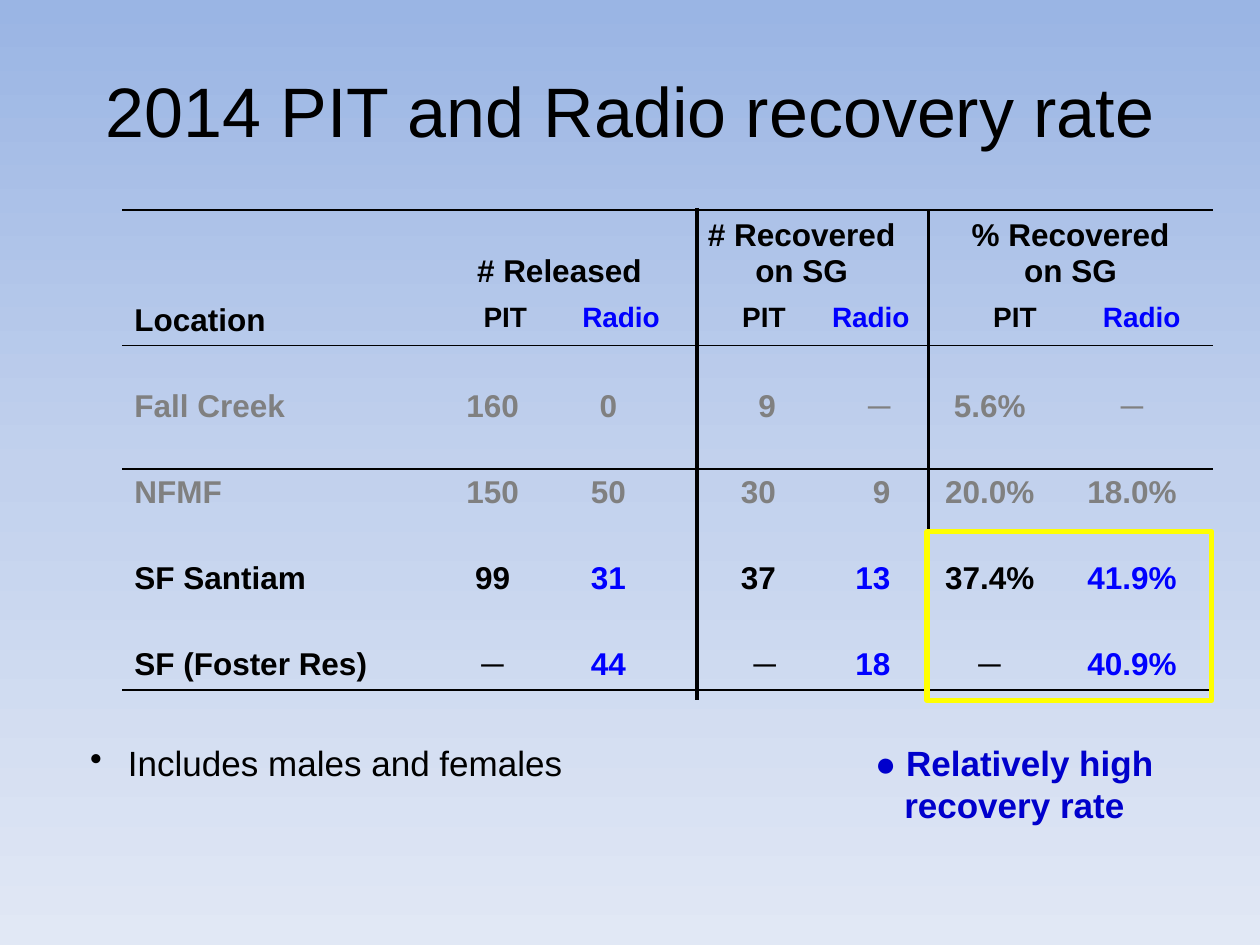
from copy import deepcopy

from lxml.etree import SubElement
from pptx import Presentation
from pptx.dml.color import RGBColor
from pptx.enum.shapes import MSO_CONNECTOR, MSO_SHAPE
from pptx.enum.text import MSO_ANCHOR, PP_ALIGN
from pptx.oxml import parse_xml
from pptx.oxml.ns import nsdecls, qn
from pptx.util import Cm, Pt

BLACK = RGBColor(0x00, 0x00, 0x00)
GREY = RGBColor(0x80, 0x80, 0x80)
BLUE = RGBColor(0x00, 0x00, 0xFF)
NOTE_BLUE = RGBColor(0x00, 0x00, 0xCC)
YELLOW = RGBColor(0xFF, 0xFF, 0x00)
BACKGROUND = [
    (0, RGBColor(0x9A, 0xB5, 0xE4)),
    (0.5, RGBColor(0xC2, 0xD1, 0xED)),
    (1, RGBColor(0xE1, 0xE8, 0xF5)),
]
FONT = "Arial"
NO_STYLE = "{2D5ABB26-0587-4C30-8999-92F81FD0307C}"
LEFT, CENTER, RIGHT = PP_ALIGN.LEFT, PP_ALIGN.CENTER, PP_ALIGN.RIGHT
TOP, MIDDLE, BOTTOM = MSO_ANCHOR.TOP, MSO_ANCHOR.MIDDLE, MSO_ANCHOR.BOTTOM

TITLE = "2014 PIT and Radio recovery rate"
GROUPS = [["# Released"], ["# Recovered", "on SG"], ["% Recovered", "on SG"]]
HEADINGS = ["Location"] + ["PIT", "Radio"] * len(GROUPS)
DATA = [  # text colour of the row, text anchor, values
    (GREY, MIDDLE, ["Fall Creek", "160", "0", "9", "─", "5.6%", "─"]),
    (GREY, MIDDLE, ["NFMF", "150", "50", "30", "9", "20.0%", "18.0%"]),
    (BLACK, BOTTOM, ["SF Santiam", "99", "31", "37", "13", "37.4%", "41.9%"]),
    (BLACK, BOTTOM, ["SF (Foster Res)", "─", "44", "─", "18", "─", "40.9%"]),
]
COLUMN_WIDTHS = [6.48, 2.49, 2.18, 2.79, 2.31, 2.87, 2.87]
ROW_HEIGHTS = [1.73, 0.99, 2.49, 0.99, 1.73, 1.73]
ALIGNMENTS = [LEFT, CENTER, CENTER, RIGHT, RIGHT, CENTER, CENTER]
RIGHT_INSETS = [0.25, 0.76, 0.76, 0.76, 0.76, 0.64, 0.64]
HEADING_INSETS = {3: 1.04, 5: 0.88}
RULES = {0: ("lnT", 1.5), 1: ("lnB", 1), 2: ("lnB", 1.5), 5: ("lnB", 1.5)}
DIVIDERS = [(18.72, 4.24, 14.15), (14.05, 4.19, 14.12)]  # x, top, bottom


def write(frame, lines, size, color, align=LEFT, bold=False):
    frame.word_wrap = True
    for index, line in enumerate(lines):
        para = frame.paragraphs[0] if index == 0 else frame.add_paragraph()
        para.alignment = align
        span = para.add_run()
        span.text = line
        span.font.name, span.font.size = FONT, Pt(size)
        span.font.bold, span.font.color.rgb = bold, color


def add_text(page, place, lines, size, color, align=LEFT, bold=False):
    box = page.shapes.add_textbox(*map(Cm, place))
    write(box.text_frame, lines, size, color, align, bold)
    return box


def fill_cell(cell, lines, size, color, align, anchor, left=0.25, right=0.25):
    cell.vertical_anchor = anchor
    cell.margin_left, cell.margin_right = Cm(left), Cm(right)
    cell.margin_top, cell.margin_bottom = Cm(0.13), Cm(0.15)
    write(cell.text_frame, lines, size, color, align, bold=True)


def add_rule(cell, edge, width):
    """Draw a black border on one edge of a cell."""
    border = parse_xml(
        f'<a:{edge} {nsdecls("a")} w="{Pt(width)}"><a:solidFill>'
        f'<a:srgbClr val="{BLACK}"/></a:solidFill></a:{edge}>'
    )
    cell._tc.get_or_add_tcPr().insert(0, border)


def paint_background(page):
    fill = page.background.fill
    fill.gradient()
    fill.gradient_angle = 270
    stops = page._element.find(".//" + qn("a:gsLst"))
    stops.append(deepcopy(stops[-1]))
    for stop, (position, color) in zip(fill.gradient_stops, BACKGROUND):
        stop.position = position
        stop.color.rgb = color


def add_recovery_table(page):
    frame = page.shapes.add_table(
        len(ROW_HEIGHTS), len(COLUMN_WIDTHS), Cm(2.46), Cm(4.24),
        Cm(sum(COLUMN_WIDTHS)), Cm(sum(ROW_HEIGHTS)),
    )
    table = frame.table
    table.first_row = table.horz_banding = False
    table._tbl.tblPr.find(qn("a:tableStyleId")).text = NO_STYLE
    for column, width in zip(table.columns, COLUMN_WIDTHS):
        column.width = Cm(width)
    for row, height in zip(table.rows, ROW_HEIGHTS):
        row.height = Cm(height)

    for group, lines in enumerate(GROUPS):
        first = 1 + 2 * group
        cell = table.cell(0, first)
        cell.merge(table.cell(0, first + 1))
        fill_cell(cell, lines, 18, BLACK, CENTER, BOTTOM)
    for c, text in enumerate(HEADINGS):
        fill_cell(
            table.cell(1, c), [text], 16 if c else 18,
            BLUE if text == "Radio" else BLACK,
            CENTER if c else LEFT, TOP, left=HEADING_INSETS.get(c, 0.25),
        )
    for r, (row_color, anchor, values) in enumerate(DATA, start=2):
        for c, text in enumerate(values):
            radio = HEADINGS[c] == "Radio" and row_color == BLACK
            fill_cell(
                table.cell(r, c), [text], 18, BLUE if radio else row_color,
                ALIGNMENTS[c], anchor, right=RIGHT_INSETS[c],
            )
    for r, row in enumerate(table.rows):
        for cell in row.cells:
            cell.fill.background()
            if r in RULES:
                add_rule(cell, *RULES[r])


def add_divider(page, x, top, bottom):
    line = page.shapes.add_connector(
        MSO_CONNECTOR.STRAIGHT, Cm(x), Cm(top), Cm(x), Cm(bottom))
    line.line.color.rgb, line.line.width = BLACK, Pt(2)
    SubElement(line._element.spPr, qn("a:effectLst"))


def add_highlight(page):
    frame = page.shapes.add_shape(
        MSO_SHAPE.RECTANGLE, Cm(18.69), Cm(10.72), Cm(5.74), Cm(3.4))
    frame.shadow.inherit = False
    frame.fill.background()
    frame.line.color.rgb, frame.line.width = YELLOW, Pt(3)


def add_notes_below(page):
    box = add_text(page, (1.57, 14.83, 10.36, 1.12),
                   ["Includes males and females"], 20, BLACK)
    props = box.text_frame.paragraphs[0]._p.get_or_add_pPr()
    props.set("marL", str(Cm(0.76)))
    props.set("indent", str(-Cm(0.76)))
    SubElement(props, qn("a:buChar")).set("char", "•")
    add_text(page, (16.03, 14.83, 8.84, 1.96),
             ["● Relatively high", "recovery rate"], 20, NOTE_BLUE, CENTER, True)


def main():
    deck = Presentation()
    deck.slide_width, deck.slide_height = Cm(25.4), Cm(19.05)
    page = deck.slides.add_slide(deck.slide_layouts[6])
    paint_background(page)
    add_divider(page, *DIVIDERS[0])
    add_recovery_table(page)
    add_text(page, (0, 1.24, 25.4, 1.96), [TITLE], 40, BLACK, CENTER)
    add_highlight(page)
    add_divider(page, *DIVIDERS[1])
    add_notes_below(page)
    deck.save("out.pptx")


if __name__ == "__main__":
    main()
